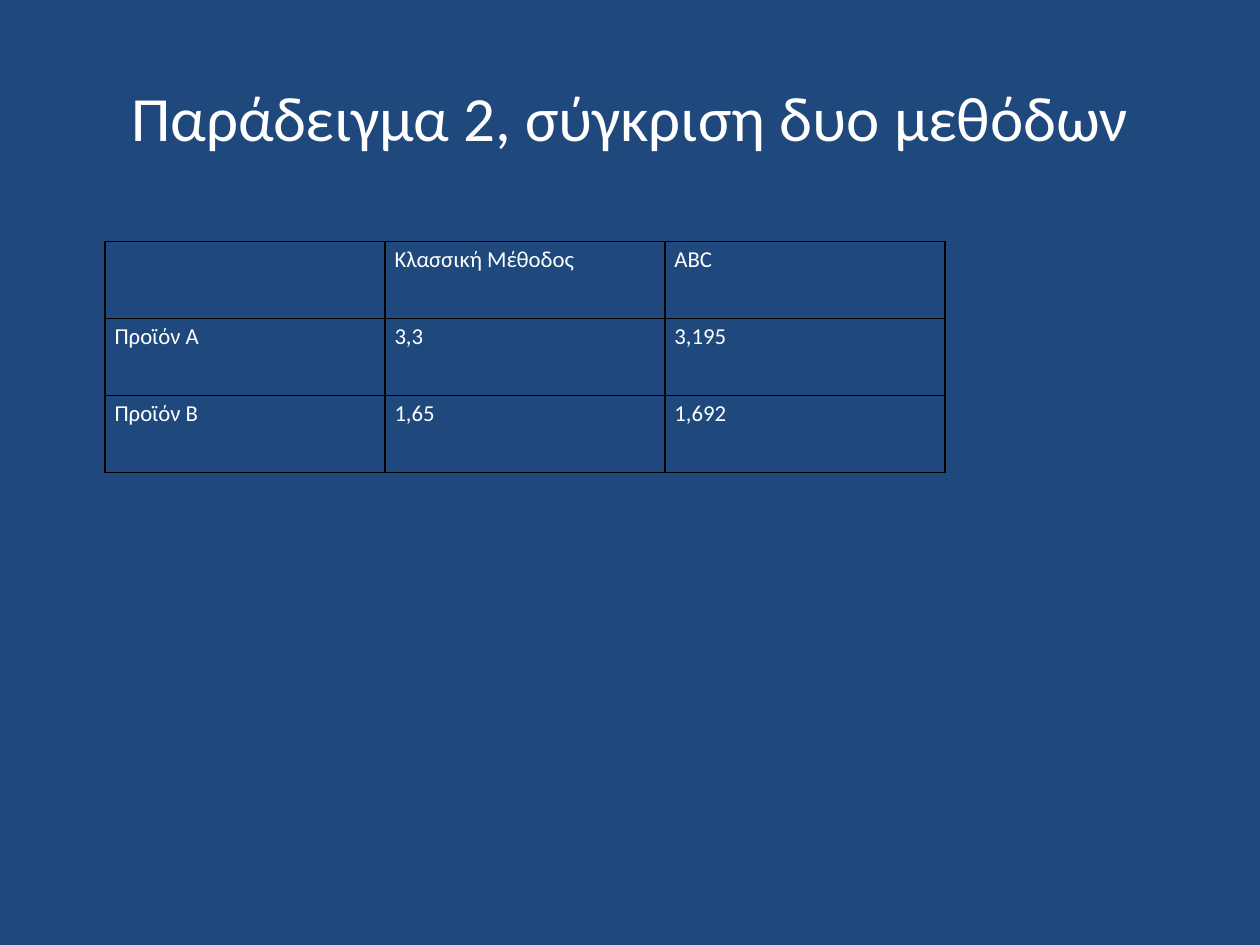
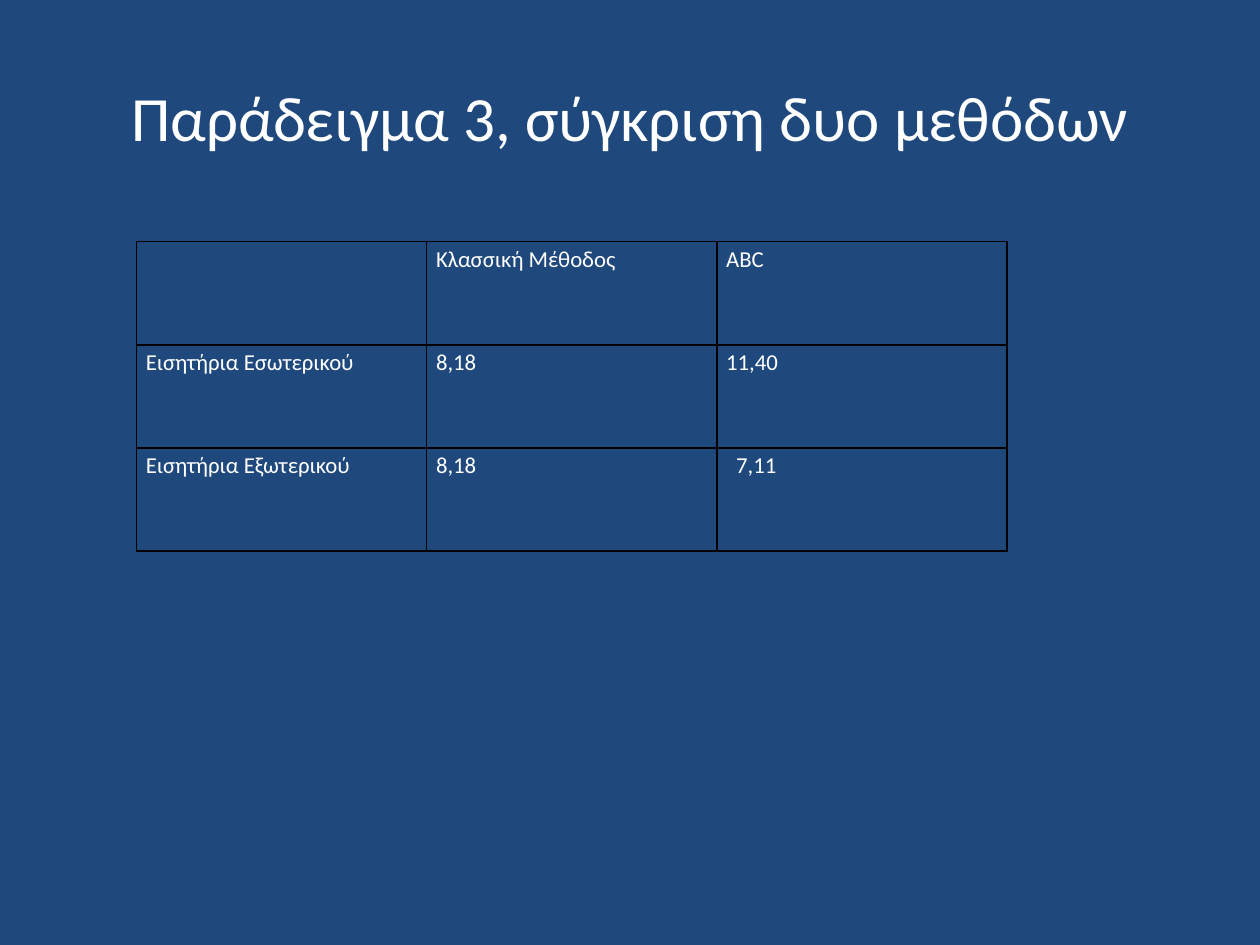
import dataclasses

import pptx
import pptx.dml.color
import pptx.enum.text
import pptx.oxml
import pptx.oxml.ns
import pptx.util

Cm = pptx.util.Cm
Pt = pptx.util.Pt
RGB = pptx.dml.color.RGBColor


@dataclasses.dataclass(frozen=True)
class Theme:
    """Colours, font and type sizes shared by the slides."""
    background: RGB = RGB(0x1F, 0x49, 0x7D)
    text: RGB = RGB(0xFF, 0xFF, 0xFF)
    border: RGB = RGB(0, 0, 0)
    font: str = "Calibri"
    title_size: int = 36
    cell_size: int = 13
    border_width: int = 1
    cell_margin: float = 0.19
    line_spacing: float = 1.15


THEME = Theme()
TITLE_BOX = (1.27, 0.76, 22.86, 3.18)
HEADER = ("", "Κλασσική Μέθοδος", "ABC")
NUMBER_INDENT = 0.2


def style_paragraph(p, size):
    """Apply the theme font to a paragraph."""
    p.font.name = THEME.font
    p.font.size = Pt(size)
    p.font.color.rgb = THEME.text


def add_title(slide, text, box):
    """Move, fill and format the title placeholder."""
    sp = slide.shapes.title
    sp.left, sp.top, sp.width, sp.height = map(Cm, box)
    tf = sp.text_frame
    tf.text = text
    tf.word_wrap = True
    tf.vertical_anchor = pptx.enum.text.MSO_ANCHOR.MIDDLE
    p = tf.paragraphs[0]
    p.alignment = pptx.enum.text.PP_ALIGN.CENTER
    style_paragraph(p, THEME.title_size)


def add_borders(cell):
    """Draw a line on all four sides of a cell."""
    tc_pr = cell._tc.get_or_add_tcPr()
    for side in ("lnL", "lnR", "lnT", "lnB"):
        tc_pr.append(pptx.oxml.parse_xml(
            f'<a:{side} {pptx.oxml.ns.nsdecls("a")} w="{Pt(THEME.border_width)}">'
            f'<a:solidFill><a:srgbClr val="{THEME.border}"/></a:solidFill></a:{side}>'))


def fill_cell(cell, text, indent=0):
    """Write and format one cell of a comparison table."""
    add_borders(cell)
    cell.fill.background()
    cell.margin_left = Cm(THEME.cell_margin + indent)
    cell.margin_right = Cm(THEME.cell_margin)
    cell.margin_top = cell.margin_bottom = 0
    cell.text = text
    p = cell.text_frame.paragraphs[0]
    p.line_spacing = THEME.line_spacing
    style_paragraph(p, THEME.cell_size)


def add_comparison_table(slide, rows, box, indents):
    """Fill the box with an evenly divided table of the two methods."""
    rows = (HEADER, *rows)
    table = slide.shapes.add_table(len(rows), len(HEADER), *map(Cm, box)).table
    table.first_row = table.horz_banding = False
    for r, row in enumerate(rows):
        for c, text in enumerate(row):
            fill_cell(table.cell(r, c), text, indents.get((r, c), 0))


def add_comparison_slide(prs, number, rows, box, indents):
    """Add a slide that compares the two methods for one example."""
    slide = prs.slides.add_slide(prs.slide_layouts.get_by_name("Title Only"))
    add_title(slide, f"Παράδειγμα {number}, σύγκριση δυο μεθόδων", TITLE_BOX)
    add_comparison_table(slide, rows, box, indents)


def main():
    """Build and save the presentation."""
    prs = pptx.Presentation()
    prs.slide_width, prs.slide_height = Cm(25.4), Cm(19.05)
    fill = prs.slide_master.background.fill
    fill.solid()
    fill.fore_color.rgb = THEME.background
    add_comparison_slide(
        prs, 2,
        (("Προϊόν Α", "3,3", "3,195"), ("Προϊόν Β", "1,65", "1,692")),
        (2.12, 4.87, 16.93, 4.66), {})
    add_comparison_slide(
        prs, 3,
        (("Εισητήρια Εσωτερικού", "8,18", "11,40"),
         ("Εισητήρια Εξωτερικού", "8,18", "7,11")),
        (2.75, 4.87, 17.55, 6.24), {(2, 2): NUMBER_INDENT})
    prs.save("out.pptx")


if __name__ == "__main__":
    main()
